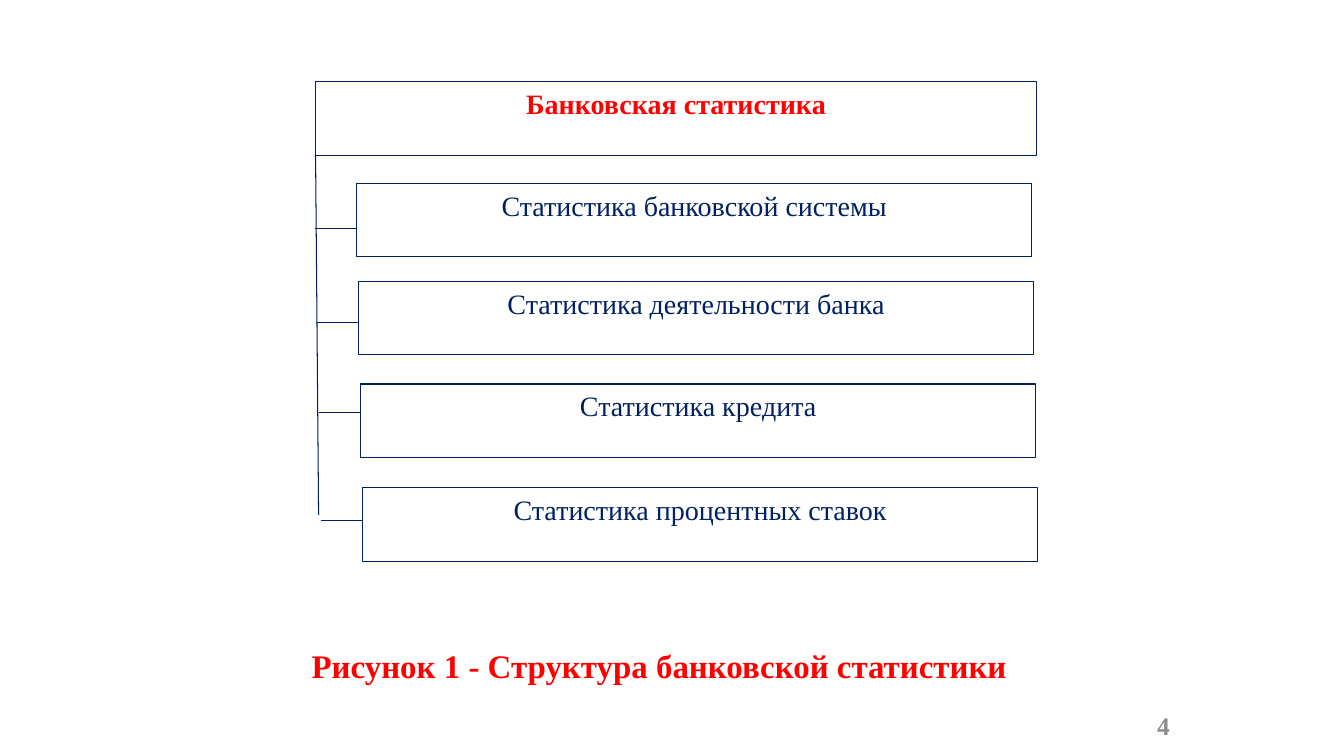
from lxml import etree
from pptx import Presentation
from pptx.dml.color import RGBColor
from pptx.enum.shapes import MSO_CONNECTOR, MSO_SHAPE
from pptx.enum.text import MSO_ANCHOR, PP_ALIGN
from pptx.oxml.ns import qn
from pptx.util import Inches, Pt

RECTANGLE = MSO_SHAPE.RECTANGLE
STRAIGHT = MSO_CONNECTOR.STRAIGHT
TOP, MIDDLE = MSO_ANCHOR.TOP, MSO_ANCHOR.MIDDLE
CENTER, RIGHT = PP_ALIGN.CENTER, PP_ALIGN.RIGHT

FONT = "Times New Roman"
COLORS = {"red": "FF0000", "navy": "002060", "white": "FFFFFF", "gray": "8C8C8C"}
BOX_HEIGHT = 0.73
BRANCH_WIDTH = 6.69
BRANCH_INDENT = 0.41
BRANCH_DRIFT = 0.02
TICK_LENGTH = 0.42
BRANCHES = [
    ("Статистика банковской системы", 1.01, 1.46),
    ("Статистика деятельности банка", 1.98, 2.39),
    ("Статистика кредита", 3.0, 3.28),
    ("Статистика процентных ставок", 4.03, 4.35),
]


def color(name):
    """Return the named palette colour."""
    return RGBColor.from_string(COLORS[name])


def write(shape, text, size, color_name, bold=False, align=CENTER, anchor=TOP):
    """Fill a shape with one formatted paragraph and return the paragraph."""
    frame = shape.text_frame
    frame.word_wrap = True
    frame.vertical_anchor = anchor
    paragraph = frame.paragraphs[0]
    paragraph.text = text
    paragraph.alignment = align
    paragraph.font.name = FONT
    paragraph.font.size = Pt(size)
    paragraph.font.bold = bold
    paragraph.font.color.rgb = color(color_name)
    return paragraph


def add_box(slide, left, top, width, text, color_name, bold=False):
    """Add an outlined white box of the diagram."""
    box = slide.shapes.add_shape(
        RECTANGLE, Inches(left), Inches(top), Inches(width), Inches(BOX_HEIGHT))
    box.shadow.inherit = False
    box.fill.solid()
    box.fill.fore_color.rgb = color("white")
    box.line.color.rgb = color("navy")
    box.line.width = Pt(0.75)
    write(box, text, 20, color_name, bold)


def add_line(slide, x1, y1, x2, y2):
    """Add a thin navy line without a shadow."""
    line = slide.shapes.add_connector(
        STRAIGHT, Inches(x1), Inches(y1), Inches(x2), Inches(y2))
    line.line.color.rgb = color("navy")
    line.line.width = Pt(0.75)
    etree.SubElement(line._element.spPr, qn("a:effectLst"))


def add_diagram(slide, left, top, width):
    """Draw the root box, its branches and the lines that tie them."""
    add_box(slide, left, top, width, "Банковская статистика", "red", bold=True)
    add_line(slide, left, top + BOX_HEIGHT, left + 0.03, top + 4.3)
    for index, (text, box_offset, tick_offset) in enumerate(BRANCHES):
        branch_left = left + BRANCH_INDENT + index * BRANCH_DRIFT
        tick_y = top + tick_offset
        add_box(slide, branch_left, top + box_offset, BRANCH_WIDTH, text, "navy")
        add_line(slide, branch_left - TICK_LENGTH, tick_y, branch_left, tick_y)


def add_caption(slide, left, top, width, height):
    """Add the figure caption."""
    caption = slide.shapes.add_textbox(
        Inches(left), Inches(top), Inches(width), Inches(height))
    paragraph = write(
        caption, "Рисунок 1 ‑ Структура банковской статистики", 23.5, "red", bold=True)
    paragraph.line_spacing = 1.5


def add_page_number(slide, left, top, width, height):
    """Add the page number."""
    number = slide.shapes.add_textbox(
        Inches(left), Inches(top), Inches(width), Inches(height))
    write(number, "4", 18, "gray", bold=True, align=RIGHT, anchor=MIDDLE)


def main():
    """Build and save the slide."""
    presentation = Presentation()
    presentation.slide_width = Inches(13.33)
    presentation.slide_height = Inches(7.5)
    slide = presentation.slides.add_slide(presentation.slide_layouts[6])
    add_page_number(slide, 9.37, 6.95, 2.33, 0.5)
    add_caption(slide, -0.23, 6.16, 13.54, 0.62)
    add_diagram(slide, 3.13, 0.81, 7.15)
    presentation.save("out.pptx")


if __name__ == "__main__":
    main()
